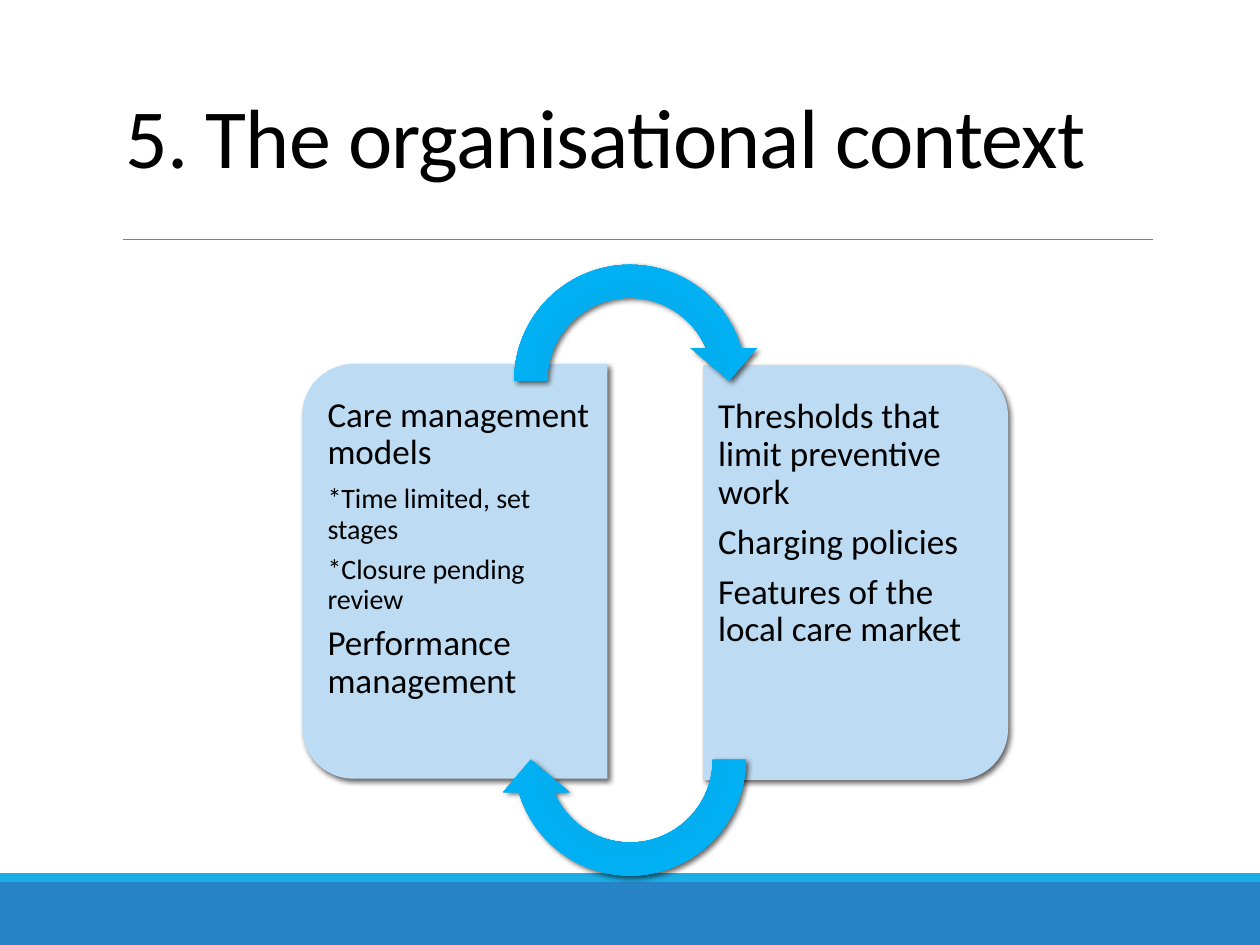
import pptx
import pptx.util
import pptx.dml.color
import pptx.enum.shapes
import pptx.enum.text
import pptx.oxml
import pptx.oxml.ns

Inches = pptx.util.Inches
Pt = pptx.util.Pt
KINDS = pptx.enum.shapes.MSO_SHAPE
ANCHOR = pptx.enum.text.MSO_ANCHOR
NS = pptx.oxml.ns.nsdecls("a")

HUES = {
    "ink": "000000", "rule": "808080", "base": "2683C6",
    "strip": "1CADE4", "panel": "BDDBF2",
}
GLOW = {0: "00ADEF", 34: "03ADEE", 70: "00B1F5", 100: "12B1EE"}
ARC = [0.125, 11.423, 204.577, 108, 0.125]
LEFT = [
    ("Care management models", 20), ("*Time limited, set stages", 16),
    ("*Closure pending review", 16), ("Performance management", 20),
]
RIGHT = [
    ("Thresholds that limit preventive work", 20),
    ("Charging policies", 20), ("Features of the local care market", 20),
]


def apply(item, form):
    for name, value in form.items():
        setattr(item, name, value)


def tint(hue):
    return pptx.dml.color.RGBColor.from_string(HUES[hue])


def block(slide, kind, box, hue, turn=0, adjust=()):
    shape = slide.shapes.add_shape(kind, *map(Inches, box))
    shape.rotation = turn
    for index, value in enumerate(adjust):
        shape.adjustments[index] = value
    shape.fill.solid()
    shape.fill.fore_color.rgb = tint(hue)
    shape.line.fill.background()
    shape.shadow.inherit = False
    return shape


def shade(shape):
    effect = shape._element.spPr.find(pptx.oxml.ns.qn("a:effectLst"))
    effect.append(pptx.oxml.parse_xml(
        f'<a:outerShdw {NS} blurRad="{Pt(3)}" dist="{Pt(2)}" dir="2700000" '
        'rotWithShape="0"><a:srgbClr val="000000"><a:alpha val="60000"/>'
        '</a:srgbClr></a:outerShdw>'))


def blend(shape):
    stops = "".join(
        f'<a:gs pos="{place * 1000}"><a:srgbClr val="{code}"/></a:gs>'
        for place, code in GLOW.items())
    fill = pptx.oxml.parse_xml(
        f'<a:gradFill {NS} rotWithShape="1"><a:gsLst>{stops}</a:gsLst>'
        '<a:path path="circle"><a:fillToRect l="100000" t="100000" '
        'r="100000" b="100000"/></a:path></a:gradFill>')
    props = shape._element.spPr
    props.replace(props.find(pptx.oxml.ns.qn("a:solidFill")), fill)


def write(slide, box, lines, form, space, after=0):
    frame = slide.shapes.add_textbox(*map(Inches, box)).text_frame
    apply(frame, {"word_wrap": True, **form})
    for index, (words, size) in enumerate(lines):
        para = frame.add_paragraph() if index else frame.paragraphs[0]
        apply(para, {"line_spacing": space, "space_after": Pt(size * after)})
        run = para.add_run()
        run.text = words
        apply(run.font, {"name": "Calibri", "size": Pt(size)})
        run.font.color.rgb = tint("ink")
    return frame


def footer(slide, box):
    x, y, w, h = box
    block(slide, KINDS.RECTANGLE, (x, y + 0.07, w, h - 0.07), "base")
    block(slide, KINDS.RECTANGLE, (x, y, w, 0.07), "strip")


def header(slide, box):
    x, y, w, h = box
    rule = slide.shapes.add_connector(
        pptx.enum.shapes.MSO_CONNECTOR.STRAIGHT,
        *map(Inches, (x + 0.08, y + h, x + w, y + h)))
    rule.line.width = Pt(0.5)
    rule.line.color.rgb = tint("rule")
    rule._element.spPr.append(pptx.oxml.parse_xml(f"<a:effectLst {NS}/>"))
    frame = write(slide, (x, y, w, 1.21), [("5. The organisational context", 48)],
                  {"vertical_anchor": ANCHOR.BOTTOM}, 0.85)
    frame.paragraphs[0].runs[0].font._element.set("spc", "-50")


def panel(slide, box, lines, turn):
    x, y, w, h = box
    shift = (h - w) / 2
    shade(block(slide, KINDS.ROUND_2_SAME_RECTANGLE,
                (x - shift, y + shift, h, w), "panel", turn, (0.167, 0)))
    inset = 0.12
    near, far = (inset, 0) if turn == 270 else (0, inset)
    form = {
        "margin_left": Inches(0.08 if near else 0.12),
        "margin_right": Inches(0.12 if near else 0.08),
        "margin_top": Inches(0.14), "margin_bottom": Inches(0.14),
    }
    write(slide, (x + near, y + inset, w - near - far, h - 2 * inset),
          lines, form, 0.9, 0.35)


def cycle(slide, box):
    x, y, w, h = box
    size = 2.1
    wide, tall = 2.42, 3.29
    panel(slide, (x, y + 0.92, wide, tall), LEFT, 270)
    panel(slide, (x + w - wide, y + 0.93, wide, tall), RIGHT, 90)
    for top, turn in ((y, 0), (y + h - size, 180)):
        arrow = block(slide, KINDS.CIRCULAR_ARROW,
                      (x + 1.55, top, size, size), "strip", turn, ARC)
        blend(arrow)
        shade(arrow)


def main():
    deck = pptx.Presentation()
    apply(deck, {"slide_width": Inches(10), "slide_height": Inches(7.5)})
    slide = deck.slides.add_slide(deck.slide_layouts[6])
    footer(slide, (0, 6.93, 10, 0.57))
    header(slide, (0.9, 0.31, 8.25, 1.59))
    cycle(slide, (2.4, 1.97, 5.6, 5.11))
    deck.save("out.pptx")


if __name__ == "__main__":
    main()
